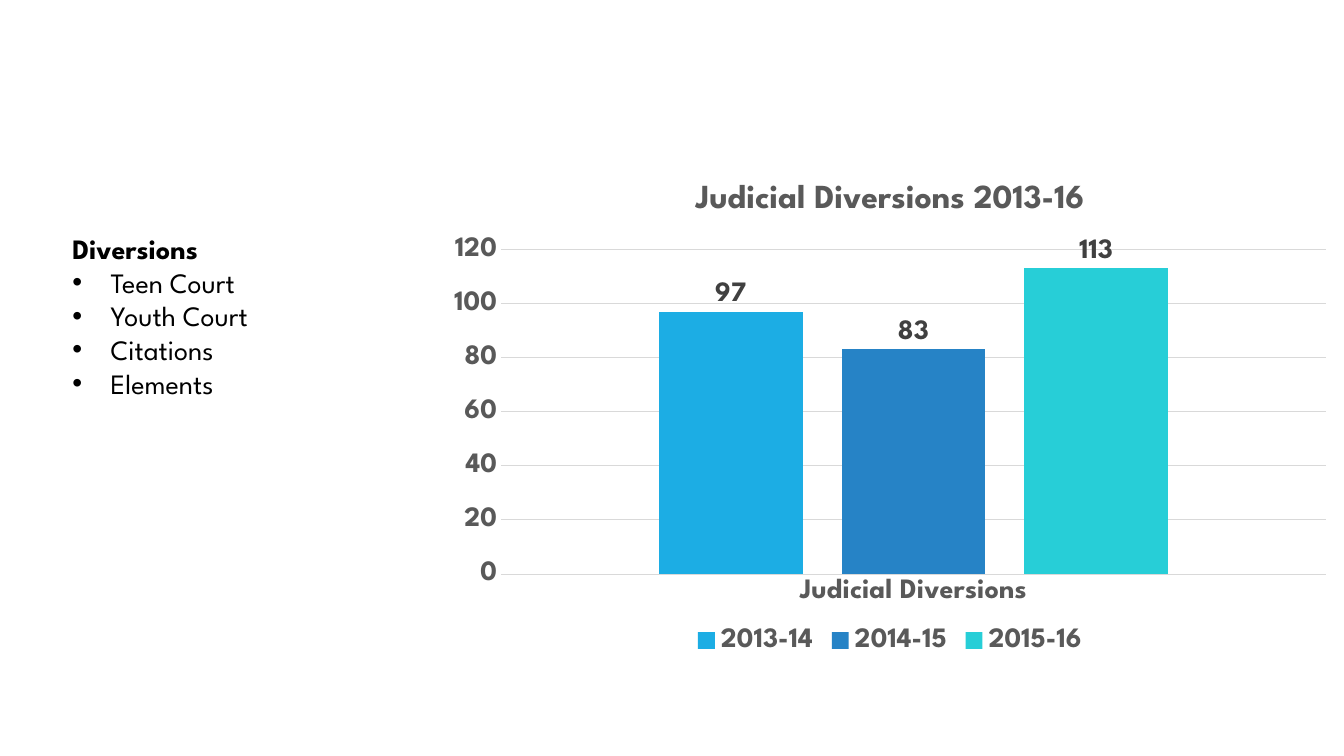
from lxml.etree import SubElement
from pptx import Presentation
from pptx.chart.data import CategoryChartData
from pptx.dml.color import RGBColor
from pptx.enum.chart import (
    XL_CHART_TYPE as ChartType,
    XL_LABEL_POSITION as LabelPosition,
    XL_LEGEND_POSITION as LegendPosition,
    XL_TICK_MARK as TickMark,
)
from pptx.oxml.ns import qn
from pptx.util import Inches, Pt

BLACK = RGBColor(0x00, 0x00, 0x00)
DARK_GRAY = RGBColor(0x40, 0x40, 0x40)
GRAY = RGBColor(0x59, 0x59, 0x59)
LIGHT_GRAY = RGBColor(0xD9, 0xD9, 0xD9)
SKY = RGBColor(0x1C, 0xAD, 0xE4)
BLUE = RGBColor(0x26, 0x83, 0xC6)
TURQUOISE = RGBColor(0x27, 0xCE, 0xD7)

DIVERSIONS = [("2013-14", 97, SKY), ("2014-15", 83, BLUE), ("2015-16", 113, TURQUOISE)]
PROGRAMS = ["Teen Court", "Youth Court", "Citations", "Elements"]


class SlideBuilder:
    """Draws on one slide; places are percentages of the slide's size."""

    def __init__(self, deck):
        self.deck = deck
        self.slide = deck.slides.add_slide(deck.slide_layouts[6])
        self.base = {"name": "League Spartan", "size": Pt(20), "bold": True}

    def place(self, left, top, width, height):
        across, down = self.deck.slide_width / 100, self.deck.slide_height / 100
        return [round(share * unit) for share, unit in
                zip((left, top, width, height), (across, down, across, down))]

    def style(self, font, color, **changes):
        for name, value in {**self.base, **changes}.items():
            setattr(font, name, value)
        font.color.rgb = color

    def line(self, line_format):
        line_format.color.rgb = LIGHT_GRAY
        line_format.width = Pt(0.75)

    def bulleted_list(self, heading, items, place):
        frame = self.slide.shapes.add_textbox(*self.place(*place)).text_frame
        frame.word_wrap = True
        for index, text in enumerate([heading, *items]):
            para = frame.paragraphs[0] if index == 0 else frame.add_paragraph()
            if index:
                properties = para._p.get_or_add_pPr()
                properties.set("marL", str(Inches(0.38)))
                properties.set("indent", str(-Inches(0.38)))
                SubElement(properties, qn("a:buFont"), typeface="Arial")
                SubElement(properties, qn("a:buChar"), char="•")
            span = para.add_run()
            span.text = text
            self.style(span.font, BLACK, bold=index == 0)

    def column_chart(self, title, category, records, place):
        data = CategoryChartData()
        data.categories = [category]
        for name, value, _ in records:
            data.add_series(name, [value])
        chart = self.slide.shapes.add_chart(
            ChartType.COLUMN_CLUSTERED, *self.place(*place), data).chart
        self.style(chart.font, BLACK)

        chart.has_title = True
        chart.chart_title.include_in_layout = False
        span = chart.chart_title.text_frame.paragraphs[0].add_run()
        span.text = title
        self.style(span.font, GRAY, size=Pt(24))

        chart.has_legend = True
        chart.legend.position = LegendPosition.BOTTOM
        chart.legend.include_in_layout = False
        self.style(chart.legend.font, GRAY)

        for axis in (chart.category_axis, chart.value_axis):
            axis.major_tick_mark = axis.minor_tick_mark = TickMark.NONE
            self.style(axis.tick_labels.font, GRAY)
        self.line(chart.category_axis.format.line)
        values = chart.value_axis
        values.minimum_scale, values.maximum_scale, values.major_unit = 0, 120, 20
        values.format.line.fill.background()
        self.line(values.major_gridlines.format.line)

        plot = chart.plots[0]
        plot.gap_width, plot.overlap, plot.vary_by_categories = 219, -27, False
        for series, (_, _, color) in zip(plot.series, records):
            series.format.fill.solid()
            series.format.fill.fore_color.rgb = color
            labels = series.data_labels
            labels.show_value = True
            labels.position = LabelPosition.OUTSIDE_END
            self.style(labels.font, DARK_GRAY)


def main():
    deck = Presentation()
    deck.slide_width, deck.slide_height = Inches(13.33), Inches(7.5)
    page = SlideBuilder(deck)
    page.column_chart("Judicial Diversions 2013-16", "Judicial Diversions",
                      DIVERSIONS, (32.45, 21.2, 67.55, 66))
    page.bulleted_list("Diversions", PROGRAMS, (4.65, 30, 22.6, 50.7))
    deck.save("out.pptx")


if __name__ == "__main__":
    main()
